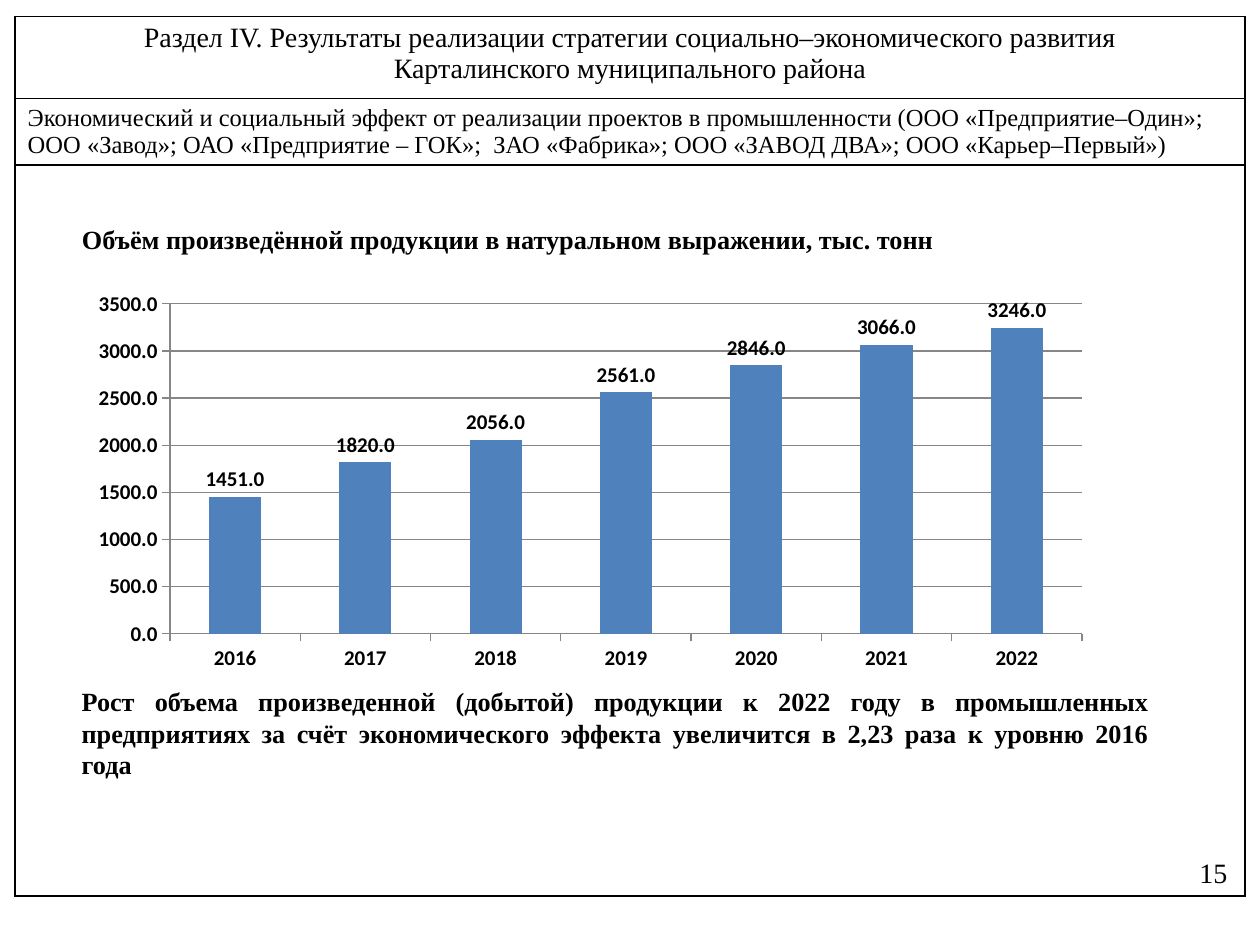
from lxml.etree import SubElement
from pptx import Presentation
from pptx.chart.data import CategoryChartData
from pptx.dml.color import RGBColor
from pptx.enum.chart import XL_CHART_TYPE as ChartType, XL_LABEL_POSITION as LabelPos
from pptx.enum.chart import XL_TICK_MARK as Tick
from pptx.enum.text import MSO_ANCHOR as Anchor, MSO_AUTO_SIZE as AutoSize, PP_ALIGN as Align
from pptx.oxml.ns import qn
from pptx.util import Inches, Pt

BLACK = RGBColor(0x00, 0x00, 0x00)
BLUE = RGBColor(0x4F, 0x81, 0xBD)
GRAY = RGBColor(0x86, 0x86, 0x86)
SERIF, SANS = "Times New Roman", "Calibri"

SECTION = ["Раздел IV. Результаты реализации стратегии социально–экономического развития",
           "Карталинского муниципального района"]
PROJECTS = ["Экономический и социальный эффект от реализации проектов в промышленности "
            "(ООО «Предприятие–Один»;",
            "ООО «Завод»; ОАО «Предприятие – ГОК»;  ЗАО «Фабрика»; ООО «ЗАВОД ДВА»; "
            "ООО «Карьер–Первый»)"]
HEADING = "Объём произведённой продукции в натуральном выражении, тыс. тонн"
SUMMARY = ("Рост объема произведенной (добытой) продукции к 2022 году в промышленных "
           "предприятиях за счёт экономического эффекта увеличится в 2,23 раза к уровню 2016 года")
OUTPUT = dict(zip(range(2016, 2023), (1451, 1820, 2056, 2561, 2846, 3066, 3246)))


def inches(box):
    return [Inches(v) for v in box]


def write(tf, lines, size, align=Align.LEFT, bold=False):
    tf.word_wrap = True
    for i, line in enumerate(lines):
        p = tf.add_paragraph() if i else tf.paragraphs[0]
        p.text, p.alignment = line, align
        font = p.font
        font.name, font.size, font.bold = SERIF, Pt(size), bold
        font.color.rgb = BLACK


def outline_cell(cell):
    cell.fill.background()
    tc_pr = cell._tc.get_or_add_tcPr()
    for i, side in enumerate(("a:lnL", "a:lnR", "a:lnT", "a:lnB")):
        line = tc_pr.makeelement(qn(side), {"w": str(Pt(1))})
        fill = SubElement(line, qn("a:solidFill"))
        SubElement(fill, qn("a:srgbClr"), val=str(BLACK))
        tc_pr.insert(i, line)


def add_frame(s, box, heights):
    """Ruled page frame: section row, projects row, open body row."""
    table = s.shapes.add_table(len(heights), 1, *inches(box)).table
    table.first_row = table.horz_banding = False
    for row, height in zip(table.rows, heights):
        row.height = Inches(height)
        outline_cell(row.cells[0])
    write(table.cell(0, 0).text_frame, SECTION, 16, Align.CENTER)
    write(table.cell(1, 0).text_frame, PROJECTS, 14, Align.JUSTIFY)


def add_heading(s, box):
    title = s.shapes.title
    title.left, title.top, title.width, title.height = inches(box)
    tf = title.text_frame
    tf.auto_size, tf.vertical_anchor = AutoSize.NONE, Anchor.TOP
    write(tf, [HEADING], 15, bold=True)


def add_text(s, box, text, size, align, bold=False, anchor=Anchor.TOP):
    tf = s.shapes.add_textbox(*inches(box)).text_frame
    tf.vertical_anchor = anchor
    write(tf, [text], size, align, bold)


def add_output_chart(s, box):
    data = CategoryChartData(number_format="0.0")
    data.categories = [str(year) for year in OUTPUT]
    data.add_series("Объём", OUTPUT.values())
    chart = s.shapes.add_chart(ChartType.COLUMN_CLUSTERED, *inches(box), data).chart
    chart.has_legend = chart.has_title = False
    chart.font.name, chart.font.size = SANS, Pt(12)
    chart.font.bold, chart.font.color.rgb = True, BLACK

    # Columns and their values
    plot = chart.plots[0]
    plot.gap_width, plot.vary_by_categories = 150, False
    fill = plot.series[0].format.fill
    fill.solid()
    fill.fore_color.rgb = BLUE
    plot.has_data_labels = True
    labels = plot.data_labels
    labels.show_value, labels.position = True, LabelPos.OUTSIDE_END
    labels.number_format, labels.number_format_is_linked = "0.0", False
    labels.font.size, labels.font.bold = Pt(12), True

    # Axes and gridlines
    value_axis = chart.value_axis
    value_axis.minimum_scale, value_axis.maximum_scale = 0, 3500
    value_axis.major_unit = 500
    value_axis.tick_labels.number_format = "0.0"
    value_axis.tick_labels.number_format_is_linked = False
    value_axis.major_gridlines.format.line.color.rgb = GRAY
    for axis in (value_axis, chart.category_axis):
        axis.major_tick_mark = Tick.OUTSIDE
        axis.format.line.color.rgb = GRAY


def main():
    prs = Presentation()
    prs.slide_width, prs.slide_height = Inches(10), Inches(7.5)
    s = prs.slides.add_slide(prs.slide_layouts[5])
    add_frame(s, (0.12, 0.13, 9.76, 6.98), (0.65, 0.53, 5.8))
    add_heading(s, (0.55, 1.72, 7.27, 0.35))
    add_text(s, (0.55, 5.39, 8.67, 0.86), SUMMARY, 15, Align.JUSTIFY, bold=True)
    add_output_chart(s, (0.62, 2.25, 8.13, 3.14))
    add_text(s, (7.51, 6.72, 2.33, 0.4), "15", 16, Align.RIGHT, anchor=Anchor.MIDDLE)
    prs.save("out.pptx")


if __name__ == "__main__":
    main()
